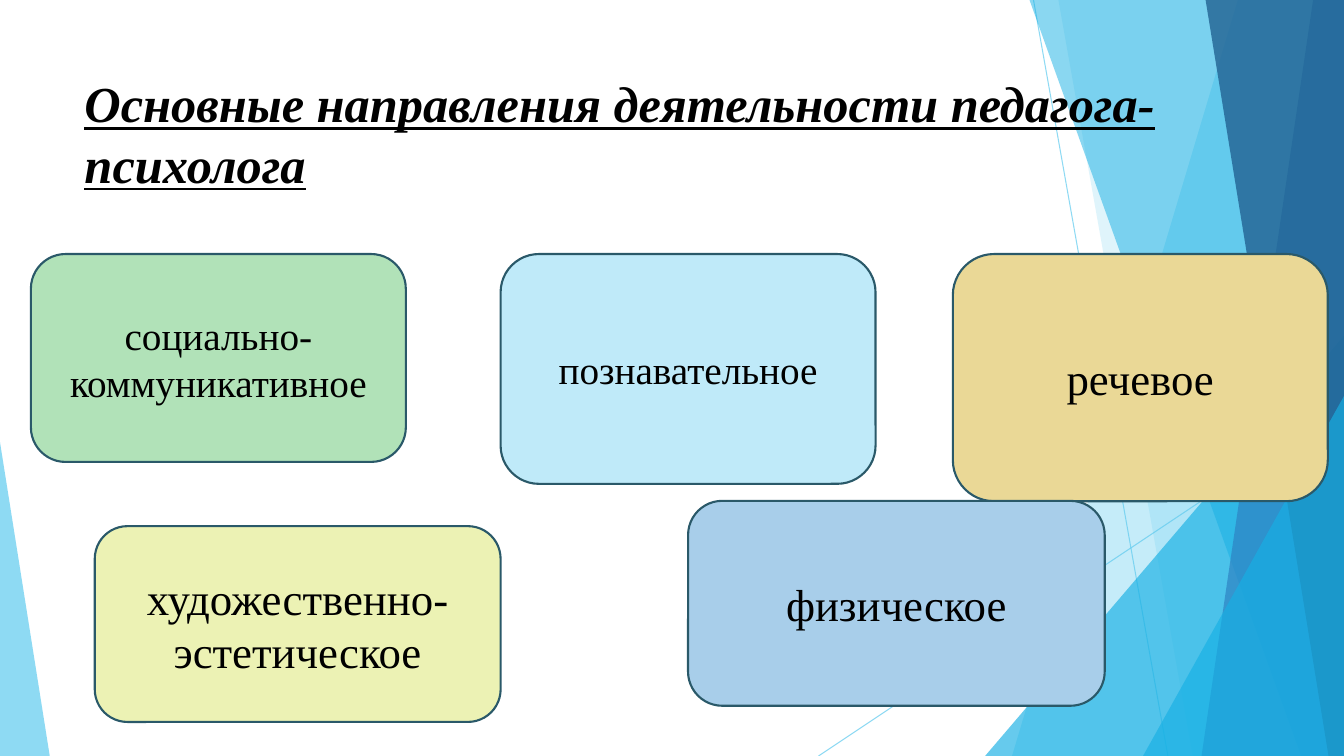
from lxml.etree import SubElement
from pptx import Presentation
from pptx.dml.color import RGBColor
from pptx.enum.shapes import MSO_CONNECTOR, MSO_SHAPE
from pptx.enum.text import MSO_ANCHOR, PP_ALIGN
from pptx.oxml.ns import qn
from pptx.util import Inches, Pt


def color(value):
    return RGBColor.from_string(value)


class DirectionsSlide:
    font_name = "Times New Roman"
    text_color = "000000"
    outline_color = "2A5969"

    def __init__(self, presentation):
        self.width = presentation.slide_width
        self.height = presentation.slide_height
        self.slide = presentation.slides.add_slide(presentation.slide_layouts[6])
        self.shapes = self.slide.shapes

    def across(self, percent):
        return round(self.width * percent / 100)

    def down(self, percent):
        return round(self.height * percent / 100)

    def frame(self, left, top, width, height):
        return self.across(left), self.down(top), self.across(width), self.down(height)

    def set_opacity(self, shape, percent):
        for tone in shape.element.spPr.iter(qn("a:srgbClr")):
            SubElement(tone, qn("a:alpha")).set("val", str(percent * 1000))

    def paint(self, shape, fill, opacity):
        shape.shadow.inherit = False
        shape.fill.solid()
        shape.fill.fore_color.rgb = color(fill)
        shape.line.fill.background()
        self.set_opacity(shape, opacity)

    def line(self, start, end, tone, opacity):
        connector = self.shapes.add_connector(
            MSO_CONNECTOR.STRAIGHT,
            self.across(start[0]), self.down(start[1]),
            self.across(end[0]), self.down(end[1]),
        )
        connector.line.color.rgb = color(tone)
        connector.line.width = Pt(0.75)
        self.set_opacity(connector, opacity)
        SubElement(connector.element.spPr, qn("a:effectLst"))

    def band(self, top_left, bottom_left, fill, opacity):
        builder = self.shapes.build_freeform(self.across(top_left), 0)
        builder.add_line_segments([
            (self.width, 0), (self.width, self.height),
            (self.across(bottom_left), self.height),
        ])
        self.paint(builder.convert_to_shape(), fill, opacity)

    def triangle(self, left, top, width, apex, fill, opacity):
        triangle = self.shapes.add_shape(
            MSO_SHAPE.ISOSCELES_TRIANGLE, *self.frame(left, top, width, 100 - top)
        )
        triangle.adjustments[0] = apex
        self.paint(triangle, fill, opacity)

    def set_text(self, shape, text, size):
        shape.text_frame.word_wrap = True
        paragraph = shape.text_frame.paragraphs[0]
        paragraph.text = text
        paragraph.font.name = self.font_name
        paragraph.font.size = Pt(size)
        paragraph.font.color.rgb = color(self.text_color)
        return paragraph

    def title(self, text, *area):
        box = self.shapes.add_textbox(*self.frame(*area))
        font = self.set_text(box, text, 36).font
        font.bold = font.italic = font.underline = True

    def card(self, text, size, fill, *area):
        card = self.shapes.add_shape(MSO_SHAPE.ROUNDED_RECTANGLE, *self.frame(*area))
        card.shadow.inherit = False
        card.fill.solid()
        card.fill.fore_color.rgb = color(fill)
        card.line.color.rgb = color(self.outline_color)
        card.line.width = Pt(1.5)
        card.text_frame.vertical_anchor = MSO_ANCHOR.MIDDLE
        self.set_text(card, text, size).alignment = PP_ALIGN.CENTER


def main():
    presentation = Presentation()
    presentation.slide_width = Inches(13.33)
    presentation.slide_height = Inches(7.5)
    page = DirectionsSlide(presentation)

    page.line((76.9, 0), (86.9, 100), "5FCBEF", 70)
    page.line((100, 53.7), (60.9, 100), "5FCBEF", 70)
    page.band(92.1, 75.3, "5FCBEF", 36)
    page.band(78.75, 88.75, "5FCBEF", 20)
    page.triangle(73.3, 44.4, 26.7, 1, "17B0E4", 66)
    page.band(76.6, 96.8, "17B0E4", 50)
    page.band(97.7, 89.4, "2E83C3", 70)
    page.band(89.7, 98.85, "226292", 80)
    page.triangle(85.05, 52.4, 14.95, 1, "17B0E4", 66)
    page.triangle(0, 58.5, 3.7, 0, "5FCBEF", 70)

    page.title("Основные направления деятельности педагога-психолога", 5.55, 8.95, 82.65, 19.2)

    top, width = 33.6, 27.9
    page.card("социально-коммуникативное", 28, "B1E2B8", 2.3, top, width, 27.5)
    page.card("познавательное", 28, "BFEAF9", 37.25, top, width, 30.4)
    page.card("речевое", 32, "EAD896", 70.9, top, width, 32.7)
    page.card("художественно-эстетическое", 32, "ECF2B4", 7.05, 69.6, 30.2, 25.9)
    page.card("физическое", 32, "A8CEEA", 51.2, 66.25, 31, 27.1)

    presentation.save("out.pptx")


if __name__ == "__main__":
    main()
